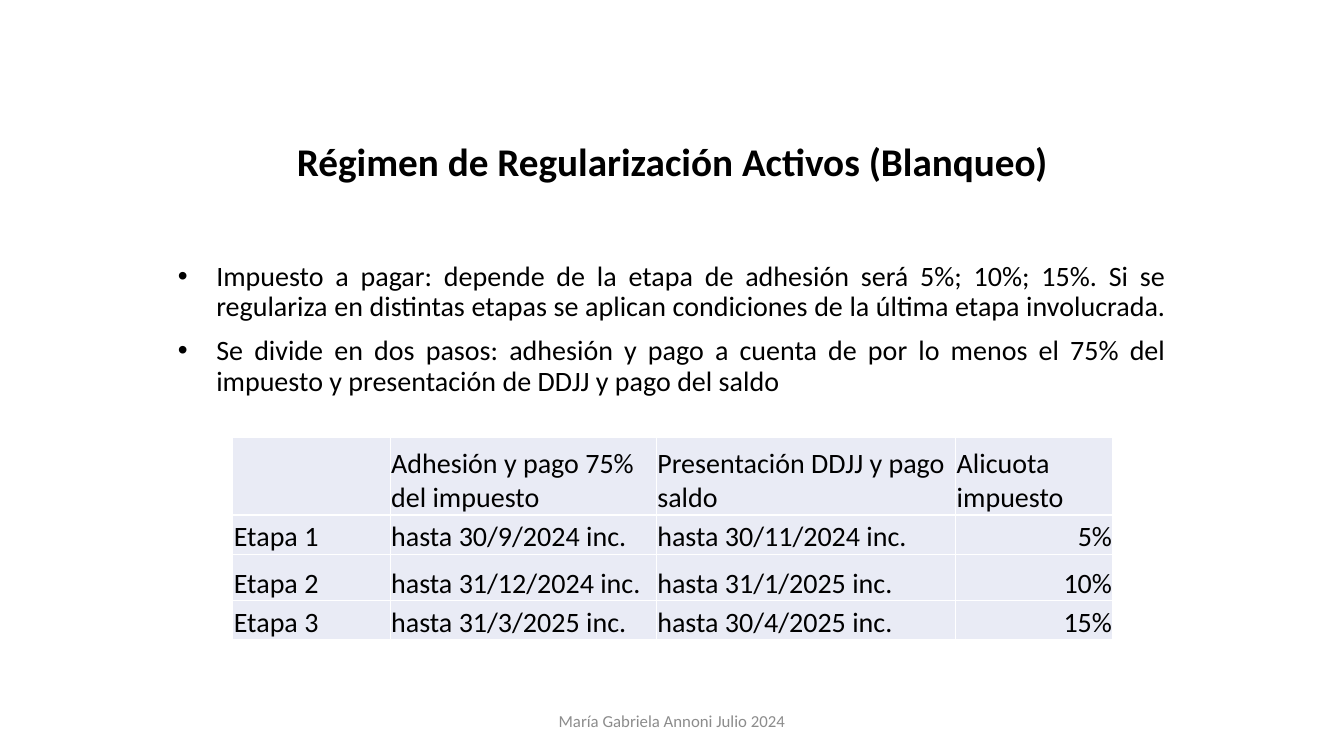
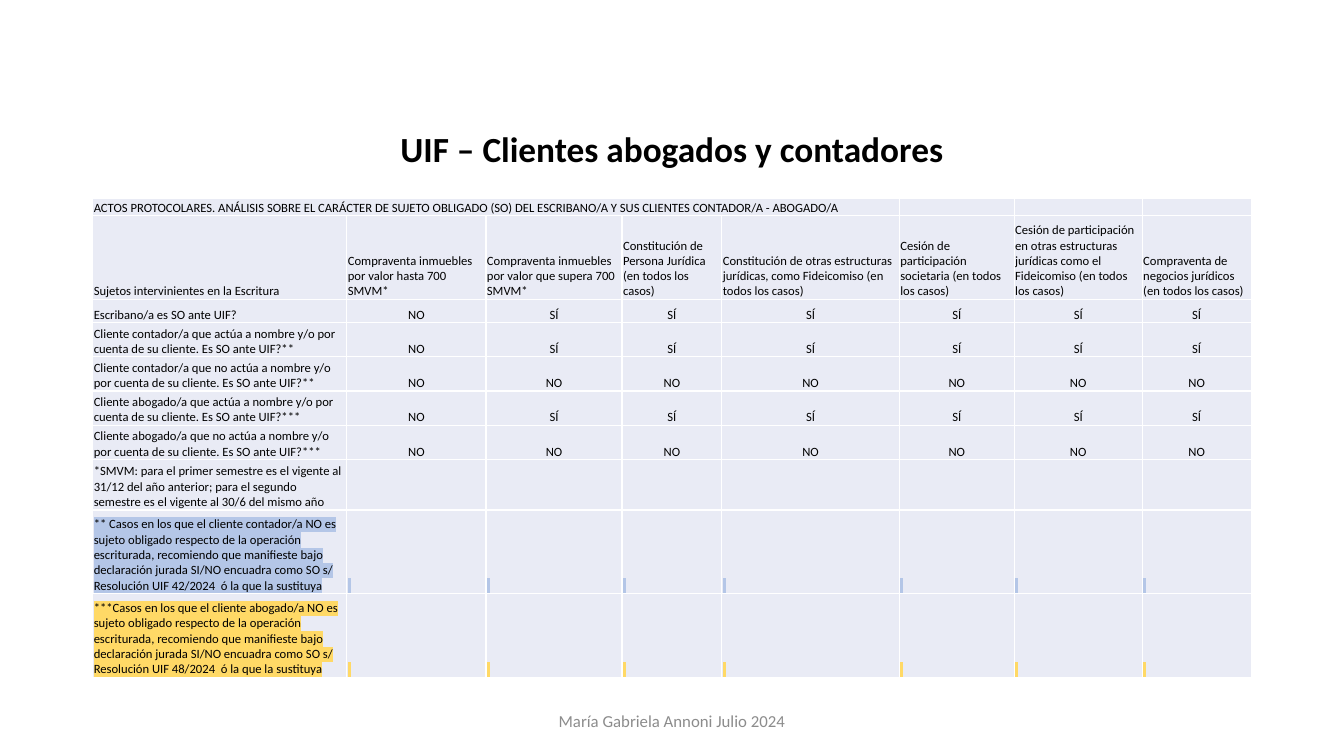
import lxml.etree
import pptx
import pptx.dml.color
import pptx.enum.text
import pptx.oxml.ns
import pptx.util

INCH = pptx.util.Inches
ALIGN = pptx.enum.text.PP_ALIGN
ANCHOR = pptx.enum.text.MSO_ANCHOR
QN = pptx.oxml.ns.qn

WIDTH, HEIGHT = 13.33, 7.5
FONT = "Calibri"
BLACK, GREY, WHITE = "000000", "8C8C8C", "FFFFFF"
CELL_FILL, BLUE_MARK, YELLOW_MARK = "E9EBF5", "B4C6E7", "FFD966"
FOOTER = "María Gabriela Annoni Julio 2024"

REGIME_TITLE = "Régimen de Regularización Activos (Blanqueo)"
REGIME_POINTS = [
    "Impuesto a pagar: depende de la etapa de adhesión será 5%; 10%; 15%. Si se regulariza en distintas etapas "
    "se aplican condiciones de la última etapa involucrada. ",
    "Se divide en dos pasos: adhesión y pago a cuenta de por lo menos el 75% del impuesto y presentación de DDJJ "
    "y pago del saldo",
]
STAGE_COLUMNS = [1.56, 2.64, 2.97, 1.56]
STAGE_HEIGHTS = [0.77, 0.39, 0.46, 0.39]
STAGES = [
    ["", "Adhesión y pago 75% del impuesto", "Presentación DDJJ y pago saldo", "Alicuota impuesto"],
    ["Etapa 1", "hasta 30/9/2024 inc.", "hasta 30/11/2024 inc.", "5%"],
    ["Etapa 2", "hasta 31/12/2024 inc.", "hasta 31/1/2025 inc.", "10%"],
    ["Etapa 3", "hasta 31/3/2025 inc.", "hasta 30/4/2025 inc.", "15%"],
]

CLIENTS_TITLE = "UIF – Clientes abogados y contadores"
CLIENT_COLUMNS = [2.52, 1.38, 1.35, 0.99, 1.76, 1.14, 1.27, 1.08]
CLIENT_HEIGHTS = [0.17, 0.83, 0.23] + [0.34] * 4 + [0.5, 0.83, 0.83]
ANSWERS = len(CLIENT_COLUMNS) - 1
ALL_NO = ["NO"] * ANSWERS
NO_THEN_YES = ["NO"] + ["SÍ"] * (ANSWERS - 1)
EMPTY = [""] * ANSWERS
MARKED = [" "] * ANSWERS
CLIENTS = [
    ["ACTOS PROTOCOLARES. ANÁLISIS SOBRE EL CARÁCTER DE SUJETO OBLIGADO (SO) DEL ESCRIBANO/A "
     "Y SUS CLIENTES CONTADOR/A - ABOGADO/A"] + EMPTY,
    ["Sujetos intervinientes en la Escritura",
     "Compraventa inmuebles por valor hasta 700 SMVM*",
     "Compraventa inmuebles por valor que supera 700 SMVM*",
     "Constitución de Persona Jurídica (en todos los casos)",
     "Constitución de otras estructuras jurídicas, como Fideicomiso (en todos los casos)",
     "Cesión de participación societaria (en todos los casos)",
     "Cesión de participación en otras estructuras jurídicas como el Fideicomiso (en todos los casos)",
     "Compraventa de negocios jurídicos (en todos los casos)"],
    ["Escribano/a es SO ante UIF?"] + NO_THEN_YES,
    ["Cliente contador/a que actúa a nombre y/o por cuenta de su cliente. Es SO ante UIF?**"] + NO_THEN_YES,
    ["Cliente contador/a que no actúa a nombre y/o por cuenta de su cliente. Es SO ante UIF?**"] + ALL_NO,
    ["Cliente abogado/a que actúa a nombre y/o por cuenta de su cliente. Es SO ante UIF?***"] + NO_THEN_YES,
    ["Cliente abogado/a que no actúa a nombre y/o por cuenta de su cliente. Es SO ante UIF?***"] + ALL_NO,
    ["*SMVM: para el primer semestre es el vigente al 31/12 del año anterior; para el segundo semestre "
     "es el vigente al 30/6 del mismo año"] + EMPTY,
    ["** Casos en los que el cliente contador/a NO es sujeto obligado respecto de la operación escriturada, "
     "recomiendo que manifieste bajo declaración jurada SI/NO encuadra como SO s/ "
     "Resolución UIF 42/2024  ó la que la sustituya"] + MARKED,
    ["***Casos en los que el cliente abogado/a NO es sujeto obligado respecto de la operación escriturada, "
     "recomiendo que manifieste bajo declaración jurada SI/NO encuadra como SO s/ "
     "Resolución UIF 48/2024  ó la que la sustituya"] + MARKED,
]
CLIENT_MARKS = {8: BLUE_MARK, 9: YELLOW_MARK}


def color(value):
    return pptx.dml.color.RGBColor.from_string(value)


def write(paragraph, text, size, ink=BLACK, bold=False, align=ALIGN.LEFT, spacing=1.0, before=0, mark=None):
    paragraph.alignment = align
    paragraph.line_spacing = spacing
    paragraph.space_before = pptx.util.Pt(before)
    if not text:
        lxml.etree.SubElement(paragraph._p, QN("a:endParaRPr"), sz=str(int(size * 100)))
        return
    run = paragraph.add_run()
    run.text = text
    run.font.size = pptx.util.Pt(size)
    run.font.bold = bold
    run.font.color.rgb = color(ink)
    run.font.name = FONT
    if mark:
        highlight = lxml.etree.Element(QN("a:highlight"))
        lxml.etree.SubElement(highlight, QN("a:srgbClr"), val=mark)
        run._r.rPr.find(QN("a:latin")).addprevious(highlight)


def place(shape, left, top, width, height, anchor):
    shape.left, shape.top, shape.width, shape.height = map(INCH, (left, top, width, height))
    frame = shape.text_frame
    frame.word_wrap = True
    frame.auto_size = pptx.enum.text.MSO_AUTO_SIZE.NONE
    frame.vertical_anchor = anchor
    return frame


def start_slide(presentation, layout, title, size, height):
    slide = presentation.slides.add_slide(presentation.slide_layouts[layout])
    frame = place(slide.shapes.title, (WIDTH - 10) / 2, 1.23, 10, height, ANCHOR.BOTTOM)
    write(frame.paragraphs[0], title, size, bold=True, align=ALIGN.CENTER, spacing=0.9)
    box = slide.shapes.add_textbox(0, 0, 0, 0)
    frame = place(box, (WIDTH - 4.5) / 2, 6.95, 4.5, 0.4, ANCHOR.MIDDLE)
    write(frame.paragraphs[0], FOOTER, 12, ink=GREY, align=ALIGN.CENTER)
    return slide


def add_bullets(frame, points, size):
    for index, point in enumerate(points):
        paragraph = frame.paragraphs[0] if index == 0 else frame.add_paragraph()
        write(paragraph, point, size, align=ALIGN.JUSTIFY, spacing=0.9, before=10 if index else 0)
        properties = paragraph._p.get_or_add_pPr()
        properties.set("marL", str(INCH(0.38)))
        properties.set("indent", str(-INCH(0.38)))
        lxml.etree.SubElement(properties, QN("a:buFont"), typeface="Arial")
        lxml.etree.SubElement(properties, QN("a:buChar"), char="•")


def style_cell(cell):
    cell.vertical_anchor = ANCHOR.BOTTOM
    cell.margin_left = cell.margin_right = cell.margin_top = INCH(0.01)
    cell.margin_bottom = 0
    properties = cell._tc.get_or_add_tcPr()
    for side in ("lnL", "lnR", "lnT", "lnB"):
        line = lxml.etree.SubElement(properties, QN("a:" + side), w=str(pptx.util.Pt(1)))
        fill = lxml.etree.SubElement(line, QN("a:solidFill"))
        lxml.etree.SubElement(fill, QN("a:srgbClr"), val=WHITE)
    cell.fill.solid()
    cell.fill.fore_color.rgb = color(CELL_FILL)


def add_grid(slide, rows, columns, heights, left, top, size, align_of, marks):
    frame = slide.shapes.add_table(len(rows), len(columns), INCH(left), INCH(top),
                                   INCH(sum(columns)), INCH(sum(heights)))
    table = frame.table
    table.first_row = table.horz_banding = False
    for column, width in zip(table.columns, columns):
        column.width = INCH(width)
    for row_index, (row, height) in enumerate(zip(rows, heights)):
        table.rows[row_index].height = INCH(height)
        for column_index, text in enumerate(row):
            cell = table.cell(row_index, column_index)
            style_cell(cell)
            write(cell.text_frame.paragraphs[0], text, size, align=align_of(text), mark=marks.get(row_index))
    return table


def stage_align(text):
    return ALIGN.RIGHT if text.endswith("%") else ALIGN.LEFT


def client_align(text):
    return ALIGN.CENTER if text in ("SÍ", "NO") else ALIGN.LEFT


def main():
    presentation = pptx.Presentation()
    presentation.slide_width, presentation.slide_height = INCH(WIDTH), INCH(HEIGHT)

    regime = start_slide(presentation, 1, REGIME_TITLE, 28, 0.66)
    body = place(regime.placeholders[1], (WIDTH - 10) / 2, 2.55, 10, 1.6, ANCHOR.TOP)
    add_bullets(body, REGIME_POINTS, 20)
    add_grid(regime, STAGES, STAGE_COLUMNS, STAGE_HEIGHTS, 2.31, 4.34, 20, stage_align, {})

    clients = start_slide(presentation, 5, CLIENTS_TITLE, 25.2, 0.51)
    table = add_grid(clients, CLIENTS, CLIENT_COLUMNS, CLIENT_HEIGHTS, 0.92, 1.97, 9, client_align, CLIENT_MARKS)
    table.cell(0, 0).merge(table.cell(0, 4))

    presentation.save("out.pptx")


if __name__ == "__main__":
    main()
